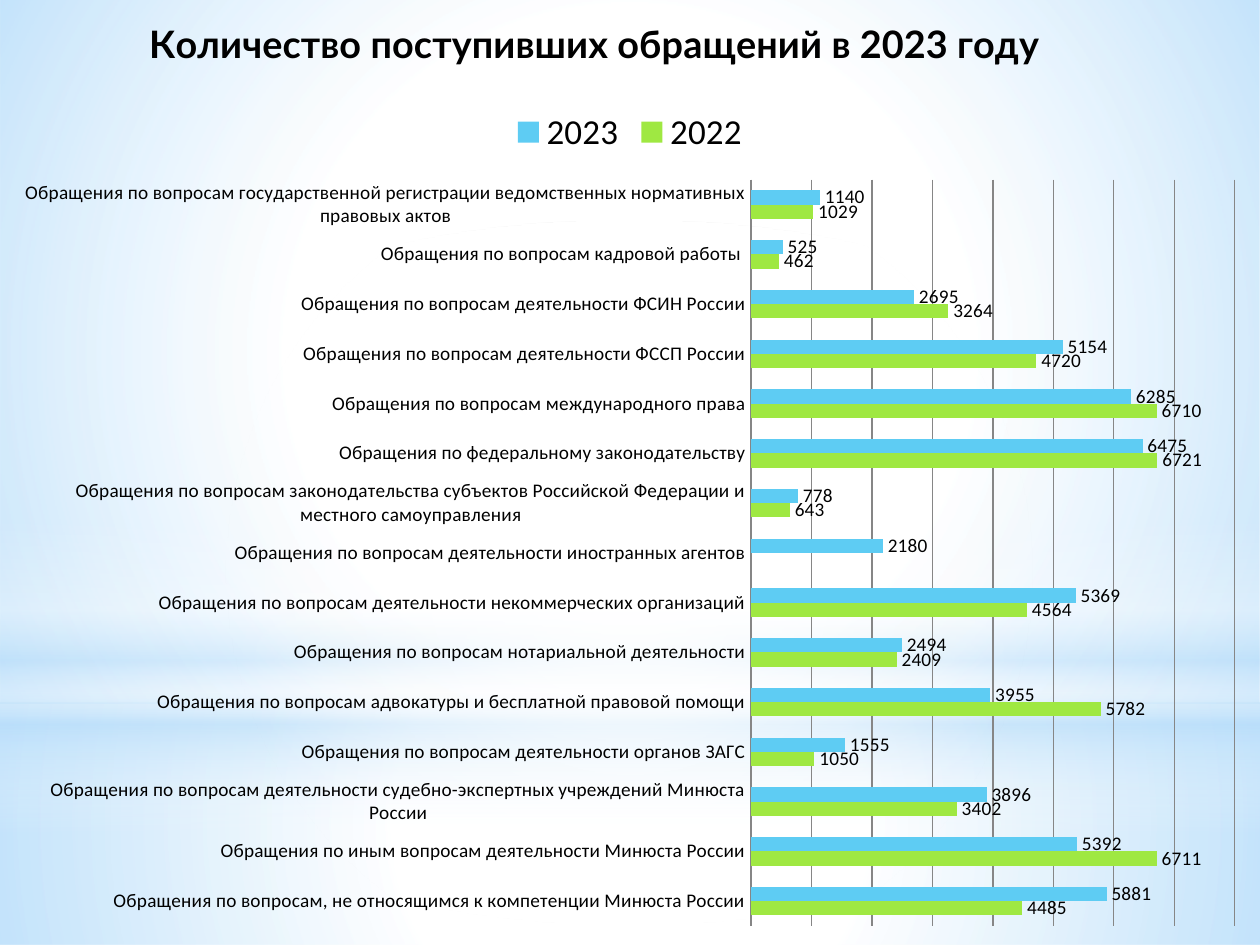
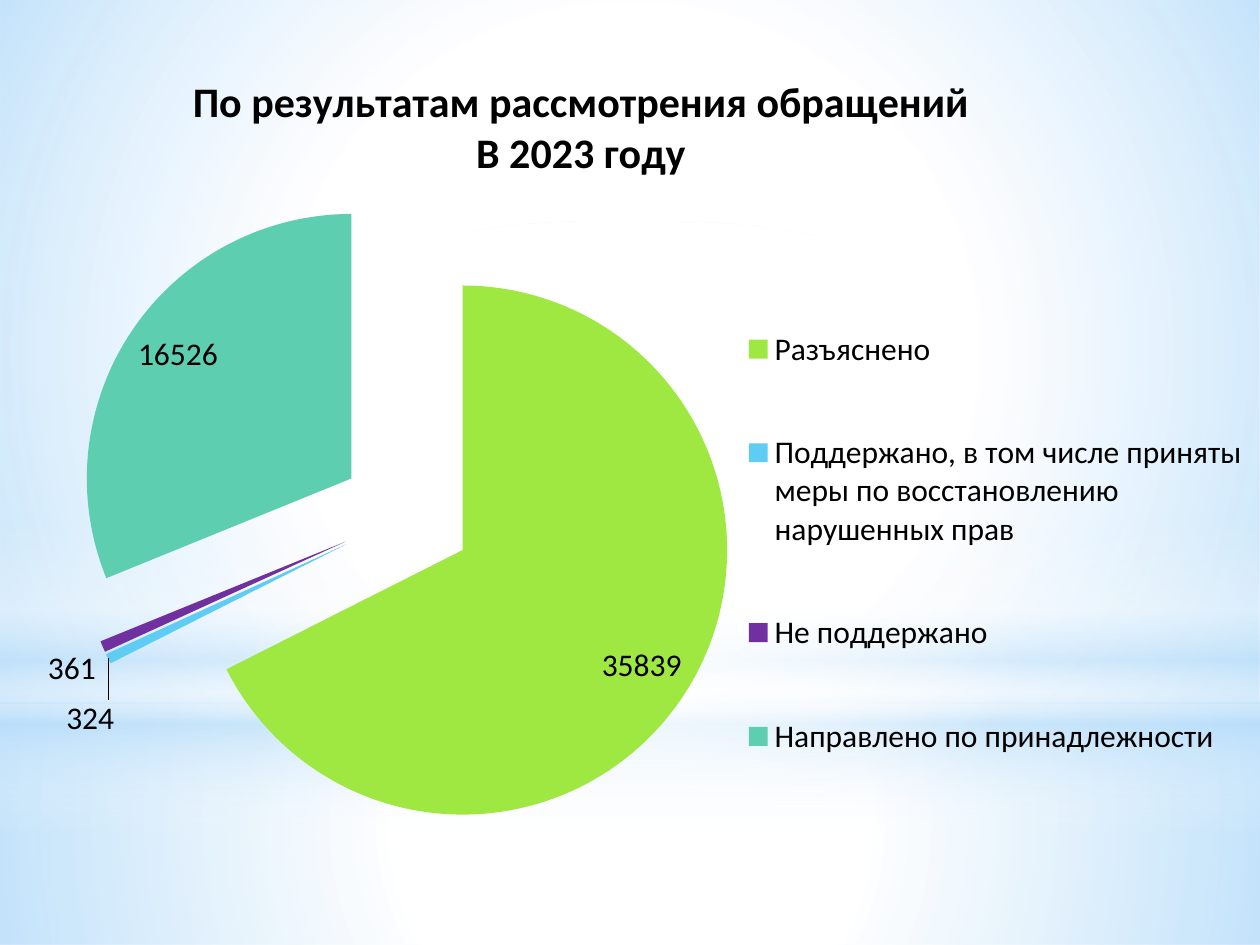
from lxml import etree
from pptx import Presentation
from pptx.chart.data import CategoryChartData
from pptx.dml.color import RGBColor
from pptx.enum.chart import (XL_CHART_TYPE, XL_LABEL_POSITION,
                             XL_LEGEND_POSITION, XL_TICK_MARK)
from pptx.enum.shapes import MSO_SHAPE
from pptx.oxml import parse_xml
from pptx.oxml.ns import nsdecls, qn
from pptx.util import Inches, Pt

BAR, PIE = XL_CHART_TYPE.BAR_CLUSTERED, XL_CHART_TYPE.PIE
IN_END, OUT_END = XL_LABEL_POSITION.INSIDE_END, XL_LABEL_POSITION.OUTSIDE_END
TOP, RIGHT = XL_LEGEND_POSITION.TOP, XL_LEGEND_POSITION.RIGHT
NO_TICK = XL_TICK_MARK.NONE
RECT, OVAL = MSO_SHAPE.RECTANGLE, MSO_SHAPE.OVAL

COLORS = {"white": "FFFFFF", "sky": "B4DCFA", "text": "000000", "grid": "868686",
          "green": "9FE842", "blue": "5ECCF3", "purple": "7030A0", "teal": "5DCEAF"}
BASE, BODY = "Lato", "Calibri"

# Backdrop: shape, box in inches, radial or not, stops (position, colour, opacity)
BACKDROP = [
    (RECT, (0, 5.58, 10, 1.92), True,
     [(0, "white", 91), (37, "white", 76), (100, "sky", 79)]),
    (RECT, (0, 0, 10, 5.58), True,
     [(0, "white", 89), (48, "white", 62), (100, "sky", 79)]),
    (RECT, (0, 4.12, 10, 2.5), False,
     [(0, "white", 0), (29, "white", 30), (45, "sky", 40),
      (55, "white", 26), (65, "sky", 60), (100, "white", 0)]),
    (OVAL, (0, 1.75, 10, 5.58), True, [(0, "white", 100), (56, "white", 0)]),
]

TOPIC_TITLE = "Количество поступивших обращений в 2023 году"
YEARS = [("2022", "green"), ("2023", "blue")]
TOPICS = [
    ("Обращения по вопросам, не относящимся к компетенции Минюста России", 4485, 5881),
    ("Обращения по иным вопросам деятельности Минюста России", 6711, 5392),
    ("Обращения по вопросам деятельности судебно-экспертных учреждений Минюста России",
     3402, 3896),
    ("Обращения по вопросам деятельности органов ЗАГС", 1050, 1555),
    ("Обращения по вопросам адвокатуры и бесплатной правовой помощи", 5782, 3955),
    ("Обращения по вопросам нотариальной деятельности", 2409, 2494),
    ("Обращения по вопросам деятельности некоммерческих организаций", 4564, 5369),
    ("Обращения по вопросам деятельности иностранных агентов", None, 2180),
    ("Обращения по вопросам законодательства субъектов Российской Федерации "
     "и местного самоуправления", 643, 778),
    ("Обращения по федеральному законодательству", 6721, 6475),
    ("Обращения по вопросам международного права", 6710, 6285),
    ("Обращения по вопросам деятельности ФССП России", 4720, 5154),
    ("Обращения по вопросам деятельности ФСИН России", 3264, 2695),
    ("Обращения по вопросам кадровой работы ", 462, 525),
    ("Обращения по вопросам государственной регистрации ведомственных "
     "нормативных правовых актов", 1029, 1140),
]

RESULT_TITLE = "По результатам рассмотрения обращений\nВ 2023 году"
RESULTS = [  # name, count, colour, label place
    ("Разъяснено", 35839, "green", IN_END),
    ("Поддержано, в том числе приняты меры по восстановлению нарушенных прав",
     324, "blue", OUT_END),
    ("Не поддержано", 361, "purple", OUT_END),
    ("Направлено по принадлежности ", 16526, "teal", IN_END),
]
MOVED = 1  # result whose label is pulled away on a leader line


def rgb(name):
    return RGBColor.from_string(COLORS[name])


def style(font, face=BODY, size=18, bold=False):
    font.name, font.size, font.bold = face, Pt(size), bold
    font.color.rgb = rgb("text")


def place(host, x, y, w=None, h=None, after=None, inner=False):
    """Give a chart part a manual layout, in shares of the chart."""
    old = host.find(qn("c:layout"))
    if old is not None:
        host.remove(old)
    layout = parse_xml(f"<c:layout {nsdecls('c')}><c:manualLayout/></c:layout>")
    pairs = [("layoutTarget", "inner" if inner else None)]
    if after != "c:idx":
        pairs += [("xMode", "edge"), ("yMode", "edge")]
    pairs += [("x", x), ("y", y), ("w", w), ("h", h)]
    for tag, val in pairs:
        if val is not None:
            etree.SubElement(layout[0], qn("c:" + tag)).set("val", str(val))
    if after:
        host.find(qn(after)).addnext(layout)
    else:
        host.insert(0, layout)


def add_backdrop(slide, master):
    """Draw the gradient shapes and move them behind all else on the master."""
    for i, (kind, box, radial, stops) in enumerate(BACKDROP):
        shape = slide.shapes.add_shape(kind, *map(Inches, box))
        shape.shadow.inherit = False
        shape.line.fill.background()
        shape.fill.background()
        marks = "".join(
            f'<a:gs pos="{pos * 1000}"><a:srgbClr val="{COLORS[name]}">'
            f'<a:alpha val="{alpha * 1000}"/></a:srgbClr></a:gs>'
            for pos, name, alpha in stops)
        way = ('<a:path path="circle"><a:fillToRect l="50000" t="50000" '
               'r="50000" b="50000"/></a:path>' if radial
               else '<a:lin ang="5400000" scaled="0"/>')
        grad = parse_xml(f"<a:gradFill {nsdecls('a')} rotWithShape=\"1\">"
                         f"<a:gsLst>{marks}</a:gsLst>{way}</a:gradFill>")
        props = shape.element.spPr
        props.replace(props.find(qn("a:noFill")), grad)
        shape.element.nvSpPr.cNvPr.set("id", str(20 + i))
        master.shapes.element.insert(2 + i, shape.element)


def add_chart(slide, kind, top, names, series, title, spot, face, size, overlay=False):
    """Add a full-width chart with its title at the given spot."""
    data = CategoryChartData()
    data.categories = names
    for name, vals in series:
        data.add_series(name, vals)
    chart = slide.shapes.add_chart(kind, 0, Inches(top), Inches(10),
                                   Inches(7.5 - top), data).chart
    style(chart.font, BASE)
    chart.has_title = True
    frame = chart.chart_title.text_frame
    frame.text = title
    for par in frame.paragraphs:
        style(par.font, face, size, True)
        for run in par.runs:
            style(run.font, face, size, True)
    head = chart.element.chart.find(qn("c:title"))
    place(head, *spot, after="c:tx")
    head.find(qn("c:overlay")).set("val", str(int(overlay)))
    return chart


def add_legend(chart, pos, size):
    chart.has_legend = True
    chart.legend.position = pos
    chart.legend.include_in_layout = False
    style(chart.legend.font, size=size)


def add_topics(slide):
    names, *cols = zip(*TOPICS)
    series = [(year, vals) for (year, _), vals in zip(YEARS, cols)]
    chart = add_chart(slide, BAR, 0, names, series, TOPIC_TITLE,
                      (0.113, 0.01), BASE, 21.6)
    add_legend(chart, TOP, 20)
    plot = chart.plots[0]
    plot.gap_width, plot.vary_by_categories = 150, False
    for ser, (_, color) in zip(plot.series, YEARS):
        ser.format.fill.solid()
        ser.format.fill.fore_color.rgb = rgb(color)
        labels = ser.data_labels
        labels.show_value, labels.position = True, OUT_END
        style(labels.font, size=11)
    cats, vals = chart.category_axis, chart.value_axis
    cats.major_tick_mark = cats.minor_tick_mark = NO_TICK
    style(cats.tick_labels.font, size=11)
    vals.visible, vals.has_major_gridlines = False, True
    vals.minimum_scale, vals.maximum_scale, vals.major_unit = 0, 8000, 1000
    for line in (cats.format.line, vals.major_gridlines.format.line):
        line.color.rgb, line.width = rgb("grid"), Pt(0.75)


def add_results(slide):
    names, counts, colors, spots = zip(*RESULTS)
    chart = add_chart(slide, PIE, 0.05, names, [("Series 1", counts)], RESULT_TITLE,
                      (0.15, 0.07), BODY, 24, overlay=True)
    add_legend(chart, RIGHT, 18)
    place(chart.element.chart.find(qn("c:legend")), 0.585, 0.275, 0.41, 0.593,
          after="c:legendPos")
    place(chart.element.chart.plotArea, 0.06, 0.189, 0.525, 0.707, inner=True)
    plot = chart.plots[0]
    plot.vary_by_categories = True
    ser = plot.series[0]
    ser.data_labels.show_value = True
    style(ser.data_labels.font)
    for i, (color, spot) in enumerate(zip(colors, spots)):
        point = ser.points[i]
        point.format.fill.solid()
        point.format.fill.fore_color.rgb = rgb(color)
        style(point.data_label.font)
        point.data_label.position = spot
    root = chart.element
    burst = parse_xml(f"<c:explosion {nsdecls('c')} val=\"25\"/>")
    next(root.iter(qn("c:ser"))).find(qn("c:tx")).addnext(burst)
    place(list(root.iter(qn("c:dLbl")))[MOVED], 0.01, 0.04, after="c:idx")


def main():
    prs = Presentation()
    prs.slide_width, prs.slide_height = Inches(10), Inches(7.5)
    blank = prs.slide_layouts[6]
    topics, results = (prs.slides.add_slide(blank) for _ in range(2))
    add_backdrop(topics, prs.slide_master)
    add_topics(topics)
    add_results(results)
    prs.save("out.pptx")


if __name__ == "__main__":
    main()
